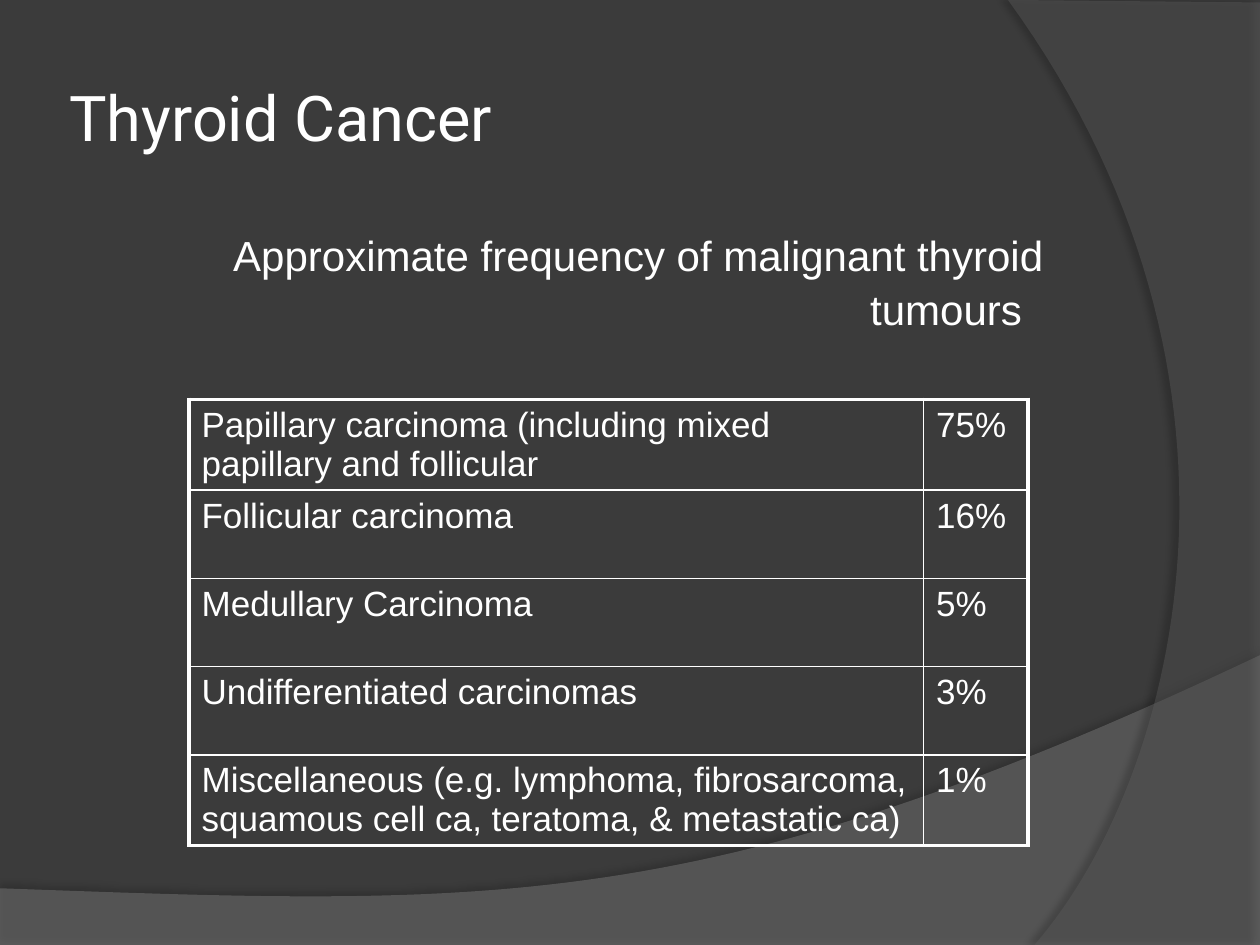
from lxml import etree
from pptx import Presentation
from pptx.dml.color import RGBColor
from pptx.enum.text import MSO_ANCHOR, PP_ALIGN
from pptx.oxml import parse_xml
from pptx.oxml.ns import qn
from pptx.util import Pt

PX = 9144
WHITE = RGBColor(0xFF, 0xFF, 0xFF)
BLACK = RGBColor(0, 0, 0)
DARK = RGBColor(0x3B, 0x3B, 0x3B)
GREY = RGBColor(0x7F, 0x7F, 0x7F)
SLATE = RGBColor(0x5E, 0x5E, 0x5E)
LEFT, RIGHT = PP_ALIGN.LEFT, PP_ALIGN.RIGHT
MIDDLE = MSO_ANCHOR.MIDDLE
NS = 'xmlns:a="http://schemas.openxmlformats.org/drawingml/2006/main"'

ROWS = [
    ("Papillary carcinoma (including mixed papillary and follicular", "75%"),
    ("Follicular carcinoma", "16%"),
    ("Medullary Carcinoma", "5%"),
    ("Undifferentiated carcinomas", "3%"),
    ("Miscellaneous (e.g. lymphoma, fibrosarcoma, squamous cell ca, "
     "teratoma, & metastatic ca)", "1%"),
]


def place(shape, box):
    """Move a shape to a box given in px."""
    shape.left, shape.top, shape.width, shape.height = [v * PX for v in box]


def style(par, size, face):
    """Format the runs of a paragraph."""
    for run in par.runs:
        run.font.size = Pt(size)
        run.font.name = face
        run.font.color.rgb = WHITE


def curve(a, b, c, d, steps=60):
    """Return points along a cubic curve."""
    marks = [i / steps for i in range(steps + 1)]
    return [tuple((1 - t) ** 3 * p + 3 * (1 - t) ** 2 * t * q
                  + 3 * (1 - t) * t * t * r + t ** 3 * s
                  for p, q, r, s in zip(a, b, c, d)) for t in marks]


def add_wave(slide, box, points, color, alpha, shade):
    """Draw a translucent shape with a shadow, its points relative to the box."""
    spots = [((box[0] + x) * PX, (box[1] + y) * PX) for x, y in points]
    pen = slide.shapes.build_freeform(*spots[0], scale=1.0)
    pen.add_line_segments(spots[1:], close=True)
    wave = pen.convert_to_shape()
    wave.line.fill.background()
    wave.fill.solid()
    wave.fill.fore_color.rgb = color
    tint = wave.element.spPr.find(qn("a:solidFill"))[0]
    etree.SubElement(tint, qn("a:alpha"), val=str(alpha * 1000))
    depth, blur, dist, angle = shade
    wave.element.spPr.append(parse_xml(
        f'<a:effectLst {NS}><a:outerShdw blurRad="{Pt(blur)}" '
        f'dist="{Pt(dist)}" dir="{angle * 60000}" algn="ctr" rotWithShape="0">'
        f'<a:srgbClr val="{BLACK}"><a:alpha val="{depth * 1000}"/></a:srgbClr>'
        '</a:outerShdw></a:effectLst>'))


def add_title(slide, box):
    """Fill the title placeholder."""
    title = slide.shapes.title
    place(title, box)
    frame = title.text_frame
    frame.text = "Thyroid Cancer"
    frame.vertical_anchor = MIDDLE
    frame.margin_left = frame.margin_right = 5 * PX
    frame.paragraphs[0].alignment = LEFT
    style(frame.paragraphs[0], 36, "Roboto")
    slide.shapes.element.append(title.element)


def add_lead(slide, box):
    """Fill the body placeholder with a right-to-left heading."""
    body = slide.placeholders[1]
    place(body, box)
    frame = body.text_frame
    frame.text = "Approximate frequency of malignant thyroid tumours"
    frame.margin_left = 20 * PX
    par = frame.paragraphs[0]
    par.alignment = RIGHT
    par.line_spacing = 1.06
    style(par, 24, "Arial")
    props = par._p.get_or_add_pPr()
    for key, val in (("marL", 46 * PX), ("indent", -17 * PX), ("rtl", 1)):
        props.set(key, str(val))
    etree.SubElement(props, qn("a:buNone"))
    slide.shapes.element.append(body.element)


def add_edges(cell, widths):
    """Draw the left, right, top and bottom borders of a cell."""
    props = cell._tc.get_or_add_tcPr()
    for side, width in zip("LRTB", widths):
        props.append(parse_xml(
            f'<a:ln{side} {NS} w="{Pt(width)}"><a:solidFill>'
            f'<a:srgbClr val="{WHITE}"/></a:solidFill></a:ln{side}>'))


def add_grid(slide, box, cols):
    """Build the frequency table with a thick outer frame."""
    size = len(ROWS), len(cols)
    grid = slide.shapes.add_table(*size, *[v * PX for v in box]).table
    grid.first_row = grid.horz_banding = False
    for col, width in zip(grid.columns, cols):
        col.width = width * PX
    for i, row in enumerate(ROWS):
        grid.rows[i].height = box[3] // len(ROWS) * PX
        for j, text in enumerate(row):
            cell = grid.cell(i, j)
            cell.text = text
            style(cell.text_frame.paragraphs[0], 20, "Arial")
            outer = j == 0, j == size[1] - 1, i == 0, i == size[0] - 1
            add_edges(cell, [2.25 if edge else 1 for edge in outer])
            cell.fill.background()


def main():
    """Build and save the slide."""
    deck = Presentation()
    deck.slide_width, deck.slide_height = 1000 * PX, 750 * PX
    slide = deck.slides.add_slide(deck.slide_layouts[1])
    slide.background.fill.solid()
    slide.background.fill.fore_color.rgb = DARK
    hill = [(0, 231), (1000, 231)]
    hill += curve((1000, 0), (559, 209), (391, 199), (0, 185))
    add_wave(slide, (0, 520, 1000, 231), hill, GREY, 45, (35, 4, 3.5, 270))
    arc = [(200, 2), (200, 750)]
    arc += curve((21, 750), (135, 619), (218, 300), (0, 0))
    add_wave(slide, (800, 0, 200, 750), arc, SLATE, 40, (45, 4, 4, 180))
    add_title(slide, (50, 30, 817, 125))
    add_lead(slide, (50, 175, 817, 495))
    add_grid(slide, (150, 317, 666, 350), (583, 83))
    deck.save("out.pptx")


if __name__ == "__main__":
    main()
